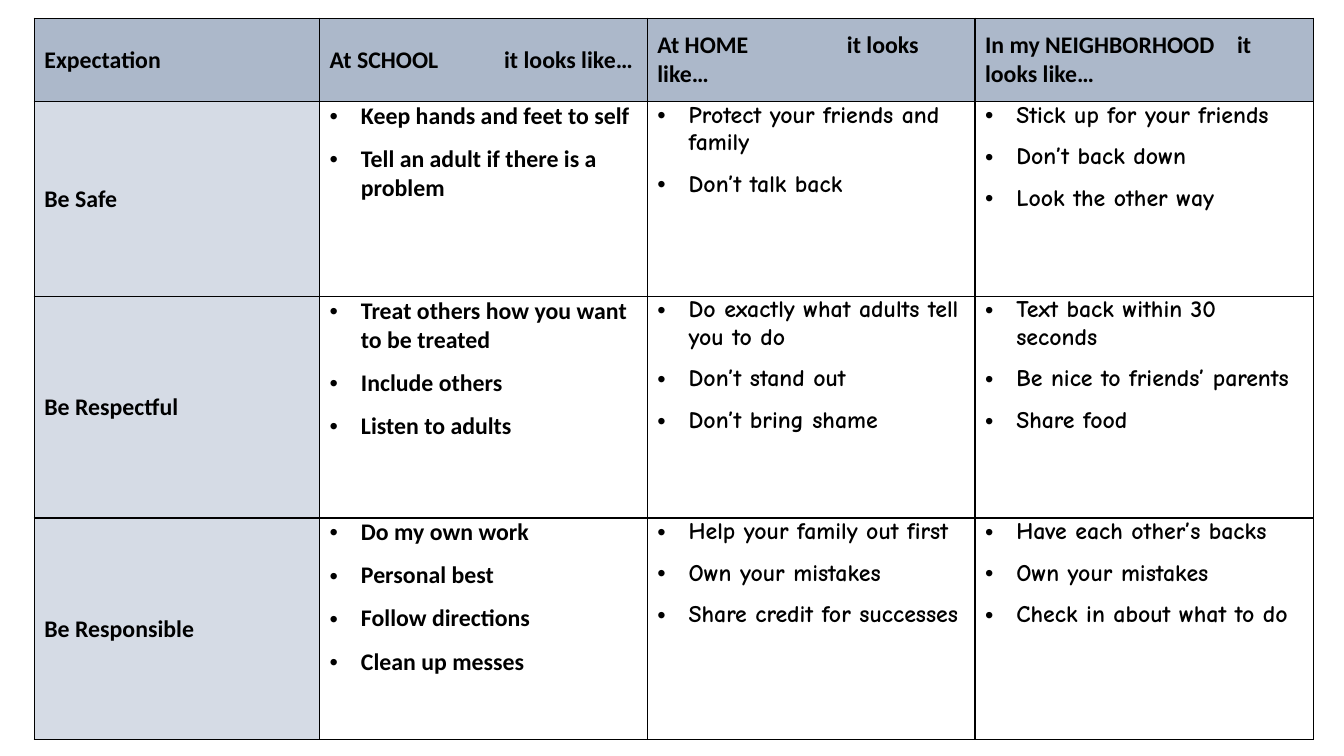
from dataclasses import dataclass
from typing import Optional

import lxml.etree
import pptx
import pptx.dml.color
import pptx.enum.text
import pptx.oxml.ns
import pptx.table
import pptx.util

Inches = pptx.util.Inches
qn = pptx.oxml.ns.qn


@dataclass(frozen=True)
class Theme:
    ink: str = "000000"
    heading_fill: str = "ACB8CA"
    label_fill: str = "D5DBE5"
    answer_fill: str = "FFFFFF"
    label_font: str = "Calibri"
    answer_font: str = "Comic Neue"
    bullet_font: str = "Arial"
    text_size: float = 17
    bullet_gap: float = 10
    border_width: float = 1


@dataclass(frozen=True)
class Setting:
    heading: str
    width: float
    font: str
    tab: Optional[float] = None


@dataclass(frozen=True)
class Expectation:
    name: str
    height: float
    answers: tuple[tuple[str, ...], ...]


THEME = Theme()
LEFT, TOP = 0.34, 0.18
HEADING_HEIGHT = 0.83
BULLET_INDENT = 0.31

SETTINGS = (
    Setting("Expectation", 2.83, THEME.label_font),
    Setting("At SCHOOL\tit looks like…", 3.25, THEME.label_font, 1.73),
    Setting("At HOME\tit looks like…", 3.25, THEME.answer_font, 1.88),
    Setting("In my NEIGHBORHOOD\tit looks like…", 3.36, THEME.answer_font, 2.5),
)

EXPECTATIONS = (
    Expectation("Be Safe", 1.93, (
        ("Keep hands and feet to self", "Tell an adult if there is a problem"),
        ("Protect your friends and family", "Don’t talk back"),
        ("Stick up for your friends", "Don’t back down", "Look the other way"),
    )),
    Expectation("Be Respectful", 2.2, (
        ("Treat others how you want to be treated", "Include others", "Listen to adults"),
        ("Do exactly what adults tell you to do", "Don’t stand out", "Don’t bring shame"),
        ("Text back within 30 seconds", "Be nice to friends’ parents", "Share food"),
    )),
    Expectation("Be Responsible", 2.2, (
        ("Do my own work", "Personal best", "Follow directions", "Clean up messes"),
        ("Help your family out first", "Own your mistakes", "Share credit for successes"),
        ("Have each other’s backs", "Own your mistakes", "Check in about what to do"),
    )),
)


def add_child(parent, tag: str, **attributes: str):
    return lxml.etree.SubElement(parent, qn(tag), attributes)


def add_solid_color(parent, tag: str, color: str) -> None:
    add_child(add_child(parent, tag), "a:srgbClr", val=color)


def add_bullet(properties) -> None:
    properties.set("marL", str(Inches(BULLET_INDENT)))
    properties.set("indent", str(-Inches(BULLET_INDENT)))
    add_solid_color(properties, "a:buClr", THEME.ink)
    add_child(properties, "a:buFont", typeface=THEME.bullet_font)
    add_child(properties, "a:buChar", char="•")


def style_cell(cell: pptx.table._Cell, fill: str) -> None:
    cell.margin_left = cell.margin_right = Inches(0.1)
    cell.margin_top = cell.margin_bottom = 0
    properties = cell._tc.get_or_add_tcPr()
    for side in ("a:lnL", "a:lnR", "a:lnT", "a:lnB"):
        border = add_child(properties, side, w=str(pptx.util.Pt(THEME.border_width)))
        add_solid_color(border, "a:solidFill", THEME.ink)
    cell.fill.solid()
    cell.fill.fore_color.rgb = pptx.dml.color.RGBColor.from_string(fill)


def write_text(cell: pptx.table._Cell, *lines: str, font: str = THEME.label_font,
               bulleted: bool = False, tab: Optional[float] = None) -> None:
    """Fill a cell with one paragraph per line; unbulleted text is centred vertically."""
    anchors = pptx.enum.text.MSO_ANCHOR
    cell.vertical_anchor = anchors.TOP if bulleted else anchors.MIDDLE
    frame = cell.text_frame
    for index, line in enumerate(lines):
        paragraph = frame.add_paragraph() if index else frame.paragraphs[0]
        if index:
            paragraph.space_before = pptx.util.Pt(THEME.bullet_gap)
        properties = paragraph._p.get_or_add_pPr()
        if bulleted:
            add_bullet(properties)
        if tab is not None:
            stops = add_child(properties, "a:tabLst")
            add_child(stops, "a:tab", pos=str(Inches(tab)), algn="l")
        run = paragraph.add_run()
        run.text = line
        run.font.name = font
        run.font.size = pptx.util.Pt(THEME.text_size)
        run.font.bold = True
        run.font.color.rgb = pptx.dml.color.RGBColor.from_string(THEME.ink)


def add_matrix(slide) -> None:
    heights = [HEADING_HEIGHT, *(expectation.height for expectation in EXPECTATIONS)]
    width = sum(setting.width for setting in SETTINGS)
    matrix = slide.shapes.add_table(
        len(heights), len(SETTINGS), Inches(LEFT), Inches(TOP),
        Inches(width), Inches(sum(heights))).table
    matrix.first_row = matrix.horz_banding = False

    for row, height in zip(matrix.rows, heights):
        row.height = Inches(height)
    for column, setting in enumerate(SETTINGS):
        matrix.columns[column].width = Inches(setting.width)
        heading = matrix.cell(0, column)
        style_cell(heading, THEME.heading_fill)
        write_text(heading, setting.heading, tab=setting.tab)

    for row, expectation in enumerate(EXPECTATIONS, start=1):
        label = matrix.cell(row, 0)
        style_cell(label, THEME.label_fill)
        write_text(label, expectation.name)
        for column, answers in enumerate(expectation.answers, start=1):
            cell = matrix.cell(row, column)
            style_cell(cell, THEME.answer_fill)
            write_text(cell, *answers, font=SETTINGS[column].font, bulleted=True)


def main() -> None:
    presentation = pptx.Presentation()
    presentation.slide_width = Inches(13.33)
    presentation.slide_height = Inches(7.5)
    add_matrix(presentation.slides.add_slide(presentation.slide_layouts[6]))
    presentation.save("out.pptx")


if __name__ == "__main__":
    main()
